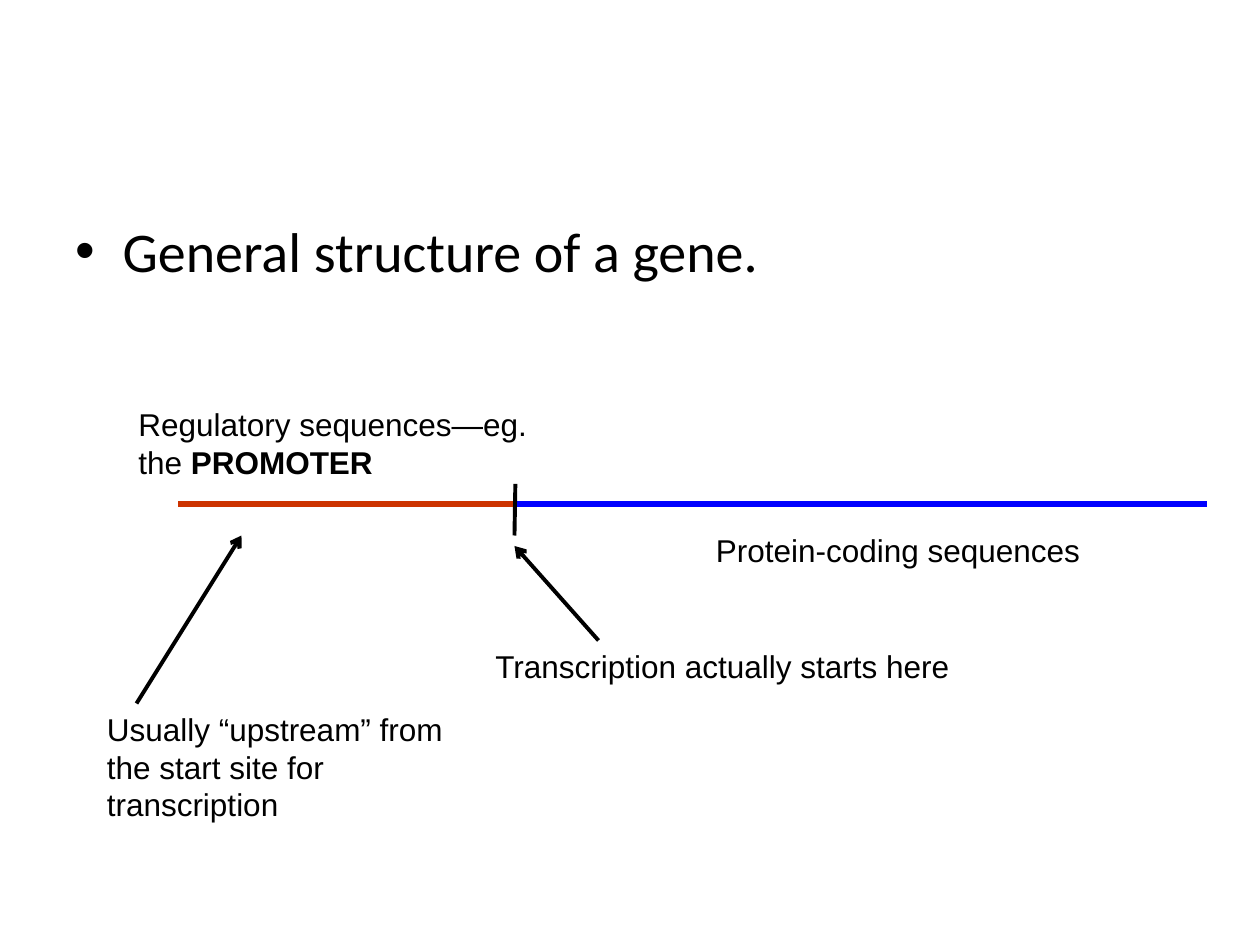
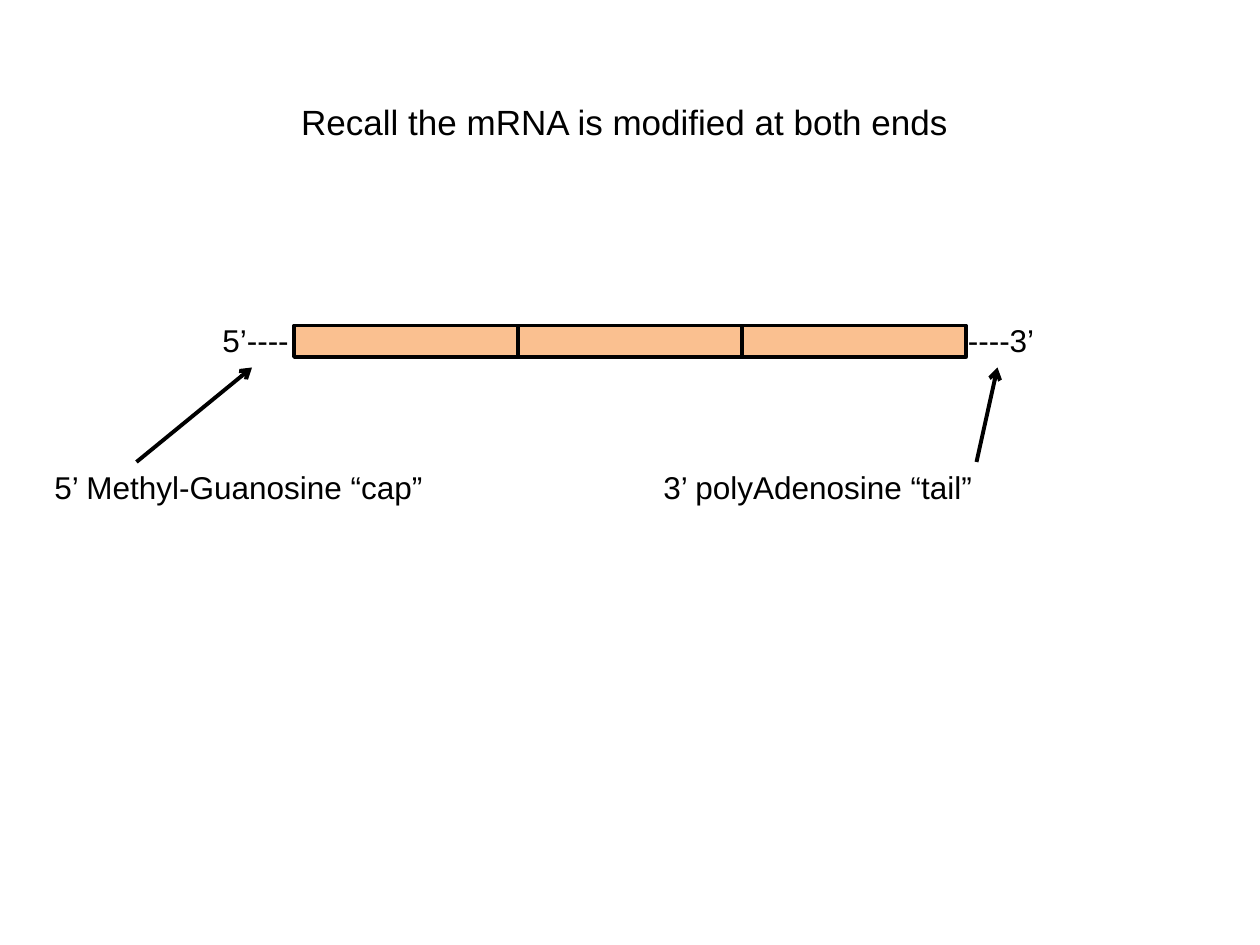
from dataclasses import dataclass

import pptx
import pptx.dml.color
import pptx.enum.shapes
import pptx.enum.text
import pptx.oxml
import pptx.oxml.ns
import pptx.util

Pt = pptx.util.Pt
Align = pptx.enum.text.PP_ALIGN


@dataclass(frozen=True)
class Theme:
    ink: str = "000000"
    regulatory: str = "CC3300"
    coding: str = "0000FF"
    exon: str = "FAC090"
    label_font: str = "Arial"
    bullet_font: str = "Calibri"
    label_size: float = 18
    heading_size: float = 20
    bullet_size: float = 32
    pointer_width: float = 2.25
    gene_width: float = 3
    exon_line_width: float = 2


THEME = Theme()


def rgb(code):
    return pptx.dml.color.RGBColor.from_string(code)


def add_xml(parent, tag, **attributes):
    element = pptx.oxml.ns.qn(tag)
    child = parent.makeelement(element, attributes)
    parent.append(child)
    return child


def apply_format(target, values):
    for name, value in values.items():
        setattr(target, name, value)


def add_text(slide, box, runs, size=THEME.label_size, font=THEME.label_font,
             align=Align.LEFT):
    frame = slide.shapes.add_textbox(*map(Pt, box)).text_frame
    frame.word_wrap = True
    paragraph = frame.paragraphs[0]
    paragraph.alignment = align
    for words, bold in runs:
        run = paragraph.add_run()
        run.text = words
        apply_format(run.font, {"name": font, "size": Pt(size), "bold": bold})
        run.font.color.rgb = rgb(THEME.ink)
    return paragraph


def add_line(slide, origin, start, end, color=THEME.ink,
             width=THEME.pointer_width, arrow=False):
    left, top = origin
    points = [left + start[0], top + start[1], left + end[0], top + end[1]]
    connector = slide.shapes.add_connector(
        pptx.enum.shapes.MSO_CONNECTOR.STRAIGHT, *map(Pt, points))
    connector.line.color.rgb = rgb(color)
    connector.line.width = Pt(width)
    if arrow:
        add_xml(connector.line._get_or_add_ln(), "a:tailEnd", type="arrow")
    add_xml(connector._element.spPr, "a:effectLst")


def add_labels(slide, origin, labels):
    left, top = origin
    for x, y, width, height, runs in labels:
        add_text(slide, (left + x, top + y, width, height), runs)


def add_bullet(slide, box, words):
    paragraph = add_text(slide, box, [(words, False)],
                         THEME.bullet_size, THEME.bullet_font)
    properties = paragraph._p.get_or_add_pPr()
    indent = Pt(27)
    properties.set("marL", str(indent))
    properties.set("indent", str(-indent))
    add_xml(properties, "a:buFont", typeface="Arial")
    add_xml(properties, "a:buChar", char="•")


def draw_gene(slide, origin):
    start_site, axis, gene_end = 240, 60, 636
    for start, end, color in [(48, start_site, THEME.regulatory),
                              (start_site, gene_end, THEME.coding)]:
        add_line(slide, origin, (start, axis), (end, axis), color,
                 THEME.gene_width)
    add_line(slide, origin, (start_site + 0.5, 48.5), (start_site, 78))
    add_labels(slide, origin, [
        (18, 0, 246, 50, [("Regulatory sequences—eg. the ", False),
                          ("PROMOTER", True)]),
        (348, 72, 246, 29, [("Protein-coding sequences", False)]),
        (222, 138, 342, 29, [("Transcription actually starts here", False)]),
        (0, 174, 210, 73, [("Usually “upstream” from the start site for "
                            "transcription", False)]),
    ])
    add_line(slide, origin, (288, 138), (start_site, 84), arrow=True)
    add_line(slide, origin, (24, 174), (84, 78), arrow=True)


def draw_exons(slide, box, count=3):
    left, top, width, height = box
    exon_width = width / count
    exons = slide.shapes.add_group_shape()
    for index in range(count):
        exon = exons.shapes.add_shape(
            pptx.enum.shapes.MSO_SHAPE.RECTANGLE,
            Pt(left + index * exon_width), Pt(top), Pt(exon_width), Pt(height))
        exon.shadow.inherit = False
        exon.fill.solid()
        exon.fill.fore_color.rgb = rgb(THEME.exon)
        exon.line.color.rgb = rgb(THEME.ink)
        exon.line.width = Pt(THEME.exon_line_width)


def draw_mrna(slide, origin):
    left, top = origin
    caption_top, arrow_tip = 84, 30
    draw_exons(slide, (left + 144, top + 6, 384, 18))
    add_labels(slide, origin, [
        (96, 0, 66, 29, [("5’----", False)]),
        (522, 0, 66, 29, [("----3’", False)]),
        (0, caption_top, 330, 29, [("5’ Methyl-Guanosine “cap”", False)]),
        (348, caption_top, 330, 29, [("3’ polyAdenosine “tail”", False)]),
    ])
    for start, end in [(54, 120), (534, 546)]:
        add_line(slide, origin, (start, caption_top), (end, arrow_tip),
                 arrow=True)


def build_gene_slide(slide):
    add_bullet(slide, (36, 120, 648, 356), "General structure of a gene.")
    draw_gene(slide, (54, 228))


def build_mrna_slide(slide):
    add_text(slide, (90, 54, 534, 32),
             [("Recall the mRNA is modified at both ends", False)],
             THEME.heading_size, align=Align.CENTER)
    draw_mrna(slide, (24, 180))


def main():
    deck = pptx.Presentation()
    apply_format(deck, {"slide_width": Pt(720), "slide_height": Pt(540)})
    for build in (build_gene_slide, build_mrna_slide):
        build(deck.slides.add_slide(deck.slide_layouts[6]))
    deck.save("out.pptx")


if __name__ == "__main__":
    main()
